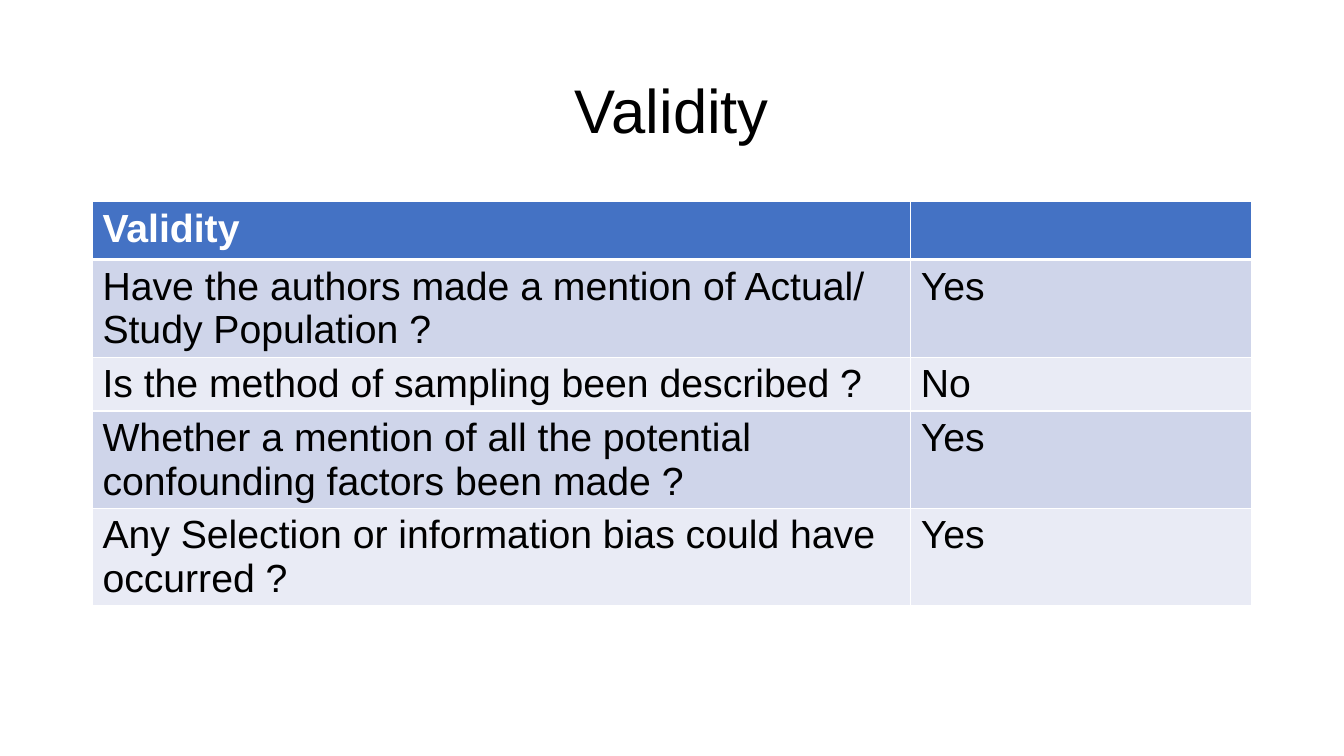
"""Build the Validity slide: a title above a two-column checklist table."""
from lxml.etree import SubElement
from pptx import Presentation
from pptx.dml.color import RGBColor
from pptx.enum.text import MSO_ANCHOR, PP_ALIGN
from pptx.oxml.ns import qn
from pptx.util import Cm, Pt

COLOURS = {
    "black": "000000",
    "white": "FFFFFF",
    "header": "4472C4",
    "odd": "CFD5EA",
    "even": "E9EBF5",
}
CHECKLIST = [
    ("Validity", ""),
    ("Have the authors made a mention of Actual/ Study Population ?", "Yes"),
    ("Is the method of sampling been described ?", "No"),
    ("Whether a mention of all the potential confounding factors been made ?", "Yes"),
    ("Any Selection or information bias could have occurred ?", "Yes"),
]
COLUMN_WIDTHS = [20.62, 8.59]
ROW_HEIGHTS = [1.35, 2.45, 1.35, 2.45, 2.45]
LEFT, WIDTH = 2.33, 29.21


def write(frame, text, size=28, colour="black", bold=False, align=PP_ALIGN.LEFT, spacing=1.0):
    paragraph = frame.paragraphs[0]
    paragraph.alignment = align
    paragraph.line_spacing = spacing
    paragraph.font.size = Pt(size)
    if text:
        run = paragraph.add_run()
        run.text = text
        run.font.name = "Arial"
        run.font.size = Pt(size)
        run.font.bold = bold
        run.font.color.rgb = RGBColor.from_string(COLOURS[colour])


def add_borders(cell, **widths):
    properties = cell._tc.get_or_add_tcPr()
    for side in "LRTB":
        border = SubElement(properties, qn(f"a:ln{side}"), w=str(Pt(widths.get(side, 1))))
        fill = SubElement(border, qn("a:solidFill"))
        SubElement(fill, qn("a:srgbClr"), val=COLOURS["white"])


def add_title(slide, text):
    title = slide.shapes.title
    title.left, title.top, title.width, title.height = Cm(LEFT), Cm(1.01), Cm(WIDTH), Cm(3.68)
    title.text_frame.vertical_anchor = MSO_ANCHOR.MIDDLE
    write(title.text_frame, text, size=44, align=PP_ALIGN.CENTER, spacing=0.9)


def add_checklist(slide):
    table = slide.shapes.add_table(
        len(CHECKLIST), len(COLUMN_WIDTHS), Cm(LEFT), Cm(5.08), Cm(WIDTH), Cm(sum(ROW_HEIGHTS))
    ).table
    for column, width in zip(table.columns, COLUMN_WIDTHS):
        column.width = Cm(width)
    for index, (entries, height) in enumerate(zip(CHECKLIST, ROW_HEIGHTS)):
        table.rows[index].height = Cm(height)
        is_header = index == 0
        band = "header" if is_header else "odd" if index % 2 else "even"
        for cell, entry in zip(table.rows[index].cells, entries):
            add_borders(cell, T=3 if index == 1 else 1, B=3 if is_header else 1)
            cell.fill.solid()
            cell.fill.fore_color.rgb = RGBColor.from_string(COLOURS[band])
            write(cell.text_frame, entry, colour="white" if is_header else "black", bold=is_header)


def main():
    deck = Presentation()
    deck.slide_width, deck.slide_height = Cm(33.87), Cm(19.05)
    slide = deck.slides.add_slide(deck.slide_layouts[5])
    add_title(slide, "Validity")
    add_checklist(slide)
    deck.save("out.pptx")


if __name__ == "__main__":
    main()
